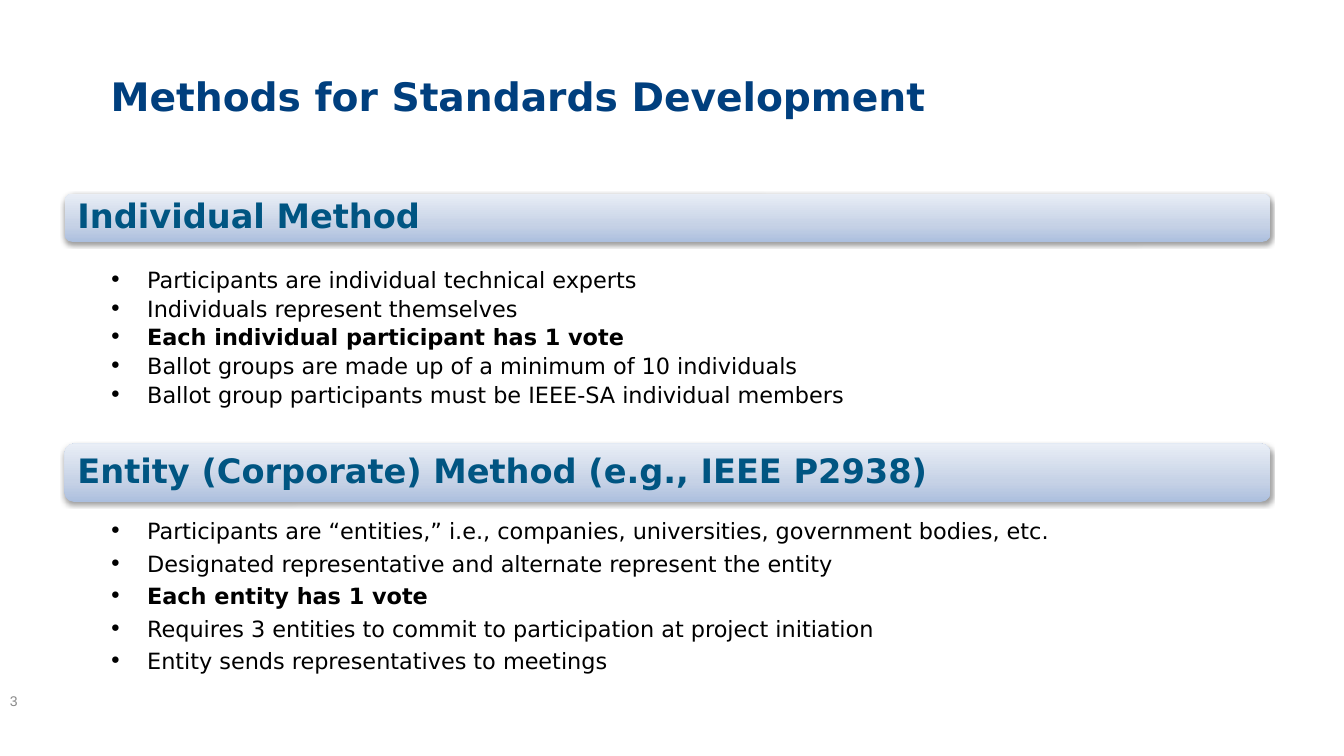
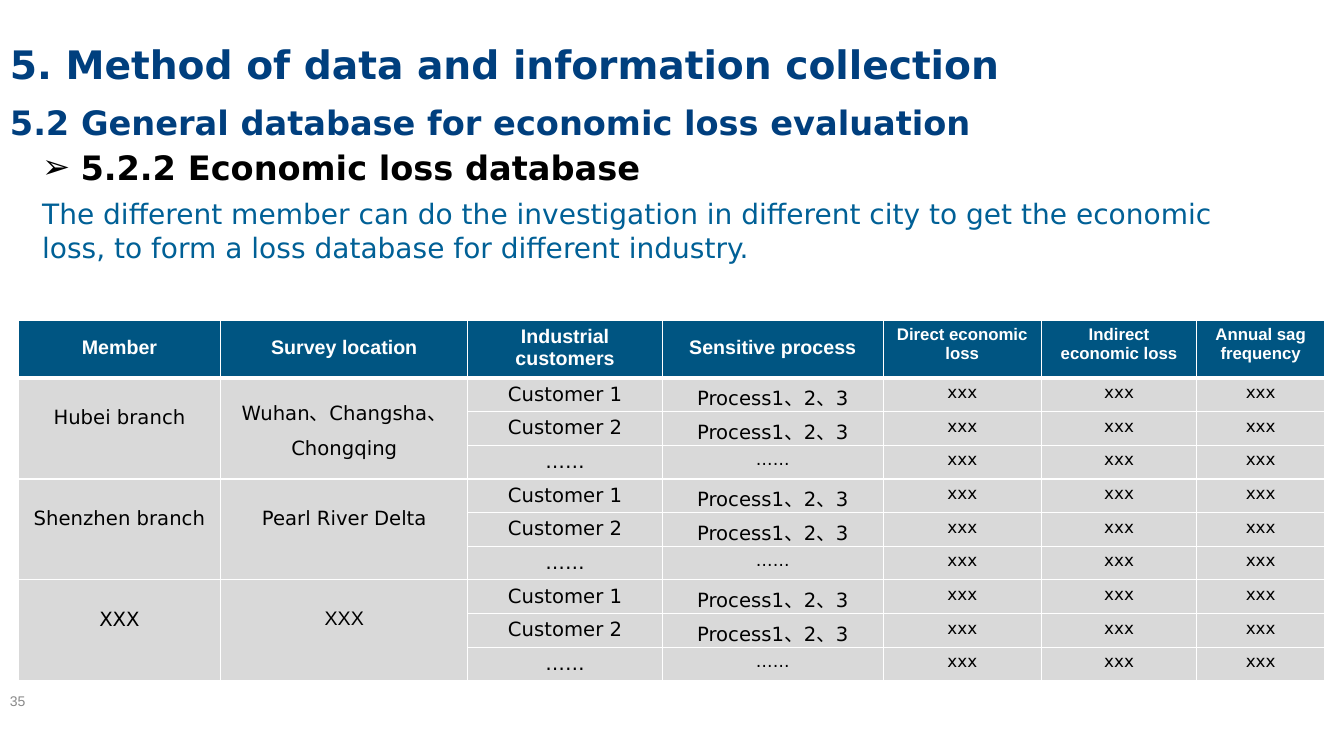
import dataclasses

import lxml.etree
import pptx
import pptx.dml.color
import pptx.enum.shapes
import pptx.enum.text
import pptx.oxml
import pptx.oxml.ns
import pptx.util

Inches = pptx.util.Inches
Pt = pptx.util.Pt
TOP = pptx.enum.text.MSO_ANCHOR.TOP
MIDDLE = pptx.enum.text.MSO_ANCHOR.MIDDLE
CENTER = pptx.enum.text.PP_ALIGN.CENTER


@dataclasses.dataclass(frozen=True)
class Theme:
    font: str = "DejaVu Sans"
    plain_font: str = "Arial"
    title: str = "003F7E"
    heading: str = "005582"
    note: str = "006096"
    ink: str = "000000"
    white: str = "FFFFFF"
    cell: str = "D9D9D9"
    number: str = "898989"
    band: tuple = ((0, "ACBFDE"), (35, "C6D2E6"), (100, "E9EEF6"))
    title_size: int = 28
    heading_size: int = 24
    note_size: int = 20
    bullet_size: int = 16
    table_size: int = 14
    small_size: int = 12
    number_size: int = 10


THEME = Theme()

INDIVIDUAL = (
    ("Participants are individual technical experts", False),
    ("Individuals represent themselves", False),
    ("Each individual participant has 1 vote", True),
    ("Ballot groups are made up of a minimum of 10 individuals", False),
    ("Ballot group participants must be IEEE-SA individual members", False),
)
ENTITY = (
    ("Participants are “entities,” i.e., companies, universities, "
     "government bodies, etc.", False),
    ("Designated representative and alternate represent the entity", False),
    ("Each entity has 1 vote", True),
    ("Requires 3 entities to commit to participation at project initiation", False),
    ("Entity sends representatives to meetings", False),
)

COLUMNS = (
    ("Member", 2.01), ("Survey location", 2.45), ("Industrial customers", 1.93),
    ("Sensitive process", 2.19), ("Direct economic loss", 1.57),
    ("Indirect economic loss", 1.54), ("Annual sag frequency", 1.27),
)
MEMBERS = (
    ("Hubei branch", "Wuhan、Changsha、Chongqing"),
    ("Shenzhen branch", "Pearl River Delta"),
    ("XXX", "XXX"),
)
SURVEYS = (
    ("Customer 1", "Process1、2、3"),
    ("Customer 2", "Process1、2、3"),
    ("……", "……"),
)


def rgb(color):
    return pptx.dml.color.RGBColor.from_string(color)


def xml(parent, tag, **attributes):
    element = lxml.etree.SubElement(parent, pptx.oxml.ns.qn(tag))
    for name, value in attributes.items():
        element.set(name, str(value))
    return element


def add_run(p, text, size, color, bold=False, font=THEME.font):
    r = p.add_run()
    r.text = text
    r.font.name = font
    r.font.size = Pt(size)
    r.font.bold = bold
    r.font.color.rgb = rgb(color)


def set_bullet(p, char, indent):
    pPr = p._p.get_or_add_pPr()
    pPr.set("marL", str(Inches(indent)))
    pPr.set("indent", str(-Inches(0.38)))
    xml(pPr, "a:buFont", typeface=THEME.font)
    xml(pPr, "a:buChar", char=char)


def add_box(slide, left, top, width, height, anchor=TOP, insets=(0.1, 0.05, 0.1, 0.05)):
    sp = slide.shapes.add_textbox(Inches(left), Inches(top), Inches(width), Inches(height))
    tf = sp.text_frame
    tf.word_wrap = True
    tf.vertical_anchor = anchor
    tf.margin_left, tf.margin_top, tf.margin_right, tf.margin_bottom = map(Inches, insets)
    return tf


def add_line(slide, box, text, size, color, bold=True):
    p = add_box(slide, *box).paragraphs[0]
    add_run(p, text, size, color, bold)
    return p


def add_number(slide, number):
    tf = add_box(slide, 0, 6.75, 1, 0.4, MIDDLE)
    add_run(tf.paragraphs[0], number, THEME.number_size, THEME.number,
            font=THEME.plain_font)


def add_band(slide, left, top, width, height, text):
    sp = slide.shapes.add_shape(
        pptx.enum.shapes.MSO_SHAPE.ROUNDED_RECTANGLE,
        Inches(left), Inches(top), Inches(width), Inches(height))
    sp.line.fill.background()
    sp.shadow.inherit = False
    spPr = sp._element.spPr
    grad = xml(spPr, "a:gradFill", rotWithShape=1)
    stops = xml(grad, "a:gsLst")
    for position, color in THEME.band:
        xml(xml(stops, "a:gs", pos=position * 1000), "a:srgbClr", val=color)
    xml(grad, "a:lin", ang=270 * 60000, scaled=0)
    spPr.find(pptx.oxml.ns.qn("a:ln")).addprevious(grad)
    shadow = xml(spPr.find(pptx.oxml.ns.qn("a:effectLst")), "a:outerShdw",
                 blurRad=Pt(3.1), dist=Pt(1.6), dir=90 * 60000, rotWithShape=0)
    xml(xml(shadow, "a:srgbClr", val=THEME.ink), "a:alpha", val=38000)

    tf = add_box(slide, left + 0.03, top + 0.03, width - 0.06, height - 0.06,
                 MIDDLE, (0.1, 0.1, 0.1, 0.1))
    p = tf.paragraphs[0]
    p.line_spacing = 0.9
    add_run(p, text, THEME.heading_size, THEME.heading, True)


def add_bullets(slide, left, top, width, height, items, gap):
    tf = add_box(slide, left, top, width, height, insets=(0.38, 0.02, 0.12, 0.02))
    for i, (text, bold) in enumerate(items):
        p = tf.add_paragraph() if i else tf.paragraphs[0]
        set_bullet(p, "•", 0.44)
        p.line_spacing = 0.9
        p.space_after = Pt(gap)
        add_run(p, text, THEME.bullet_size, THEME.ink, bold)


def set_borders(cell, bottom):
    tcPr = cell._tc.get_or_add_tcPr()
    widths = {"a:lnL": 1, "a:lnR": 1, "a:lnT": 1, "a:lnB": bottom}
    for i, (tag, width) in enumerate(widths.items()):
        ln = xml(tcPr, tag, w=Pt(width))
        xml(xml(ln, "a:solidFill"), "a:srgbClr", val=THEME.white)
        tcPr.insert(i, ln)


def fill_cell(cell, text, size, color=THEME.ink, bold=False, font=THEME.font,
              spacing=None, top=0.05):
    cell.margin_top = Inches(top)
    p = cell.text_frame.paragraphs[0]
    p.alignment = CENTER
    if spacing:
        p.line_spacing = spacing
    add_run(p, text, size, color, bold, font)


def add_loss_table(slide, left, top, width, height):
    header_height = 0.57
    body_rows = len(MEMBERS) * len(SURVEYS)
    table = slide.shapes.add_table(
        body_rows + 1, len(COLUMNS), Inches(left), Inches(top),
        Inches(width), Inches(height)).table
    table.first_row = table.horz_banding = False
    for i, row in enumerate(table.rows):
        row.height = Inches((height - header_height) / body_rows if i else header_height)
        for cell in row.cells:
            cell.fill.solid()
            cell.fill.fore_color.rgb = rgb(THEME.cell if i else THEME.heading)
            set_borders(cell, 1 if i else 3)

    for c, (label, column_width) in enumerate(COLUMNS):
        table.columns[c].width = Inches(column_width)
        fill_cell(table.cell(0, c), label,
                  THEME.table_size if c < 4 else THEME.small_size,
                  THEME.white, True, THEME.plain_font,
                  1.5 if c in (0, 1, 3) else None)

    for m, names in enumerate(MEMBERS):
        first = 1 + m * len(SURVEYS)
        for c, name in enumerate(names):
            cell = table.cell(first, c)
            cell.merge(table.cell(first + len(SURVEYS) - 1, c))
            several = "、" in name
            fill_cell(cell, name, THEME.table_size,
                      font=THEME.plain_font if c and name == "XXX" else THEME.font,
                      spacing=1.5 if several else None, top=0.05 if several else 0.28)
        for i, (customer, process) in enumerate(SURVEYS):
            r = first + i
            fill_cell(table.cell(r, 2), customer, THEME.table_size)
            fill_cell(table.cell(r, 3), process,
                      THEME.small_size if process == "……" else THEME.table_size)
            for c in range(4, len(COLUMNS)):
                fill_cell(table.cell(r, c), "xxx", THEME.small_size)


def build_methods(slide):
    left, width = 0.64, 11.96
    add_line(slide, (1, 0.67, 11.33, 1.25), "Methods for Standards Development",
             THEME.title_size, THEME.title)
    add_band(slide, left, 1.92, width, 0.48, "Individual Method")
    add_bullets(slide, left, 2.65, width, 1.6, INDIVIDUAL, 3.2)
    add_band(slide, left, 4.4, width, 0.58, "Entity (Corporate) Method (e.g., IEEE P2938)")
    add_bullets(slide, left, 5.14, width, 1.6, ENTITY, 6)
    add_number(slide, "3")


def build_database(slide):
    add_number(slide, "35")
    add_line(slide, (0, 0.35, 10.94, 0.76), "5. Method of data and information collection",
             THEME.title_size, THEME.title)
    add_line(slide, (0, 0.96, 10.94, 0.5),
             "5.2 General database for economic loss evaluation",
             THEME.heading_size, THEME.title)
    p = add_line(slide, (0.32, 1.41, 9.69, 0.5), "5.2.2 Economic loss database",
                 THEME.heading_size, THEME.ink)
    set_bullet(p, "➢", 0.38)
    add_line(slide, (0.32, 1.9, 12.13, 0.77),
             "The different member can do the investigation in different city to get "
             "the economic loss, to form a loss database for different industry.",
             THEME.note_size, THEME.note, False)
    add_loss_table(slide, 0.18, 3.18, 12.97, 3.57)


def main():
    prs = pptx.Presentation()
    prs.slide_width, prs.slide_height = Inches(13.33), Inches(7.5)
    for build in (build_methods, build_database):
        build(prs.slides.add_slide(prs.slide_layouts[6]))
    prs.save("out.pptx")


if __name__ == "__main__":
    main()
